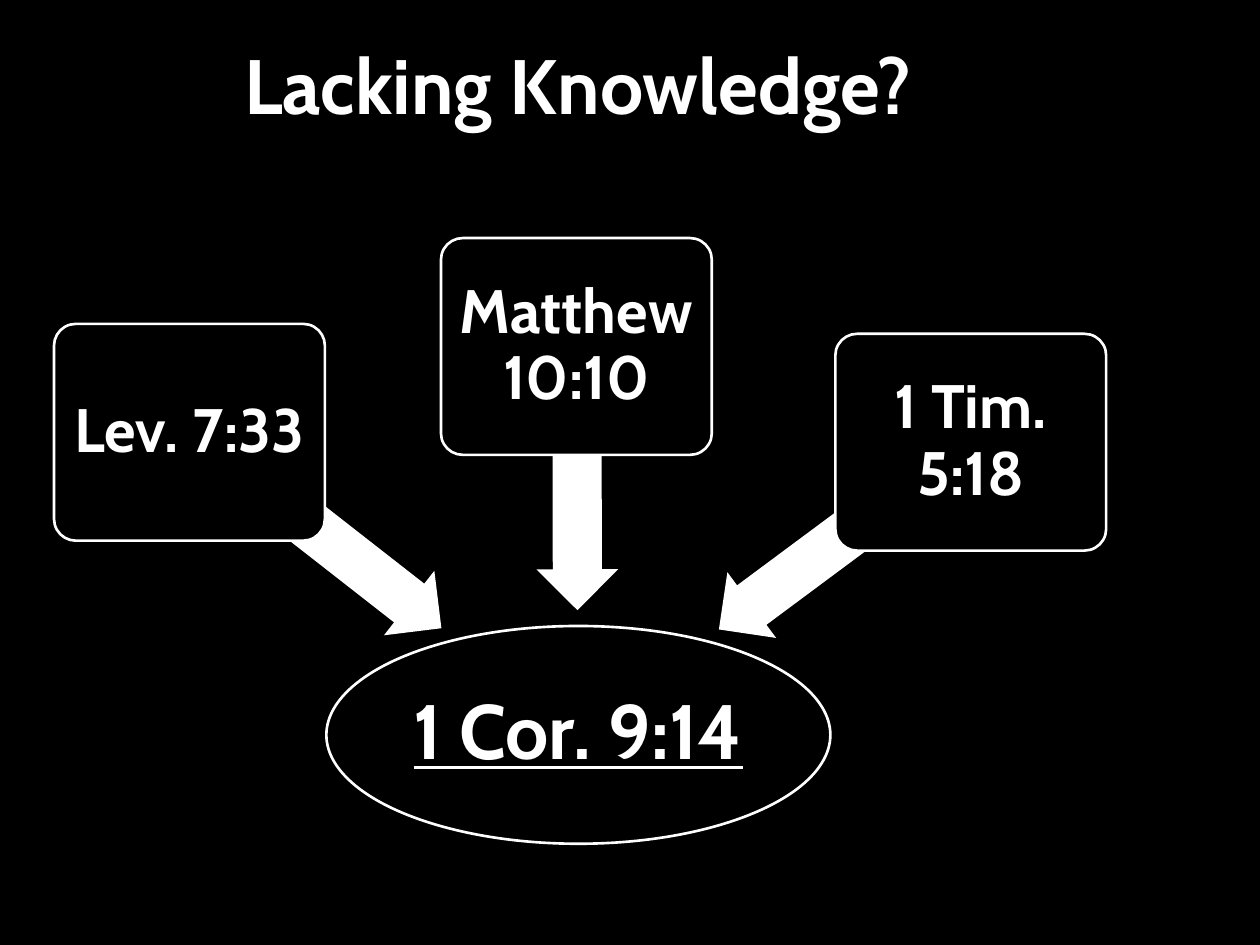
from pptx import Presentation
from pptx.dml.color import RGBColor
from pptx.enum.shapes import MSO_SHAPE
from pptx.enum.text import MSO_ANCHOR, PP_ALIGN
from pptx.util import Cm, Pt

COLORS = {"background": "000000", "foreground": "FFFFFF"}
FONT = "Cabin"
BOX_WIDTH, BOX_HEIGHT = 5.46, 4.37
ARROW_HEIGHT = 1.65
REFERENCES = [
    ("Lev. 7:33", (1.09, 6.53), (3.15, 9.86, 6.43), 218),
    ("Matthew 10:10", (8.89, 4.8), (8.97, 8.81, 5.33), 269.9),
    ("1 Tim. 5:18", (16.84, 6.73), (13.87, 9.98, 6.32), 323.4),
]


def color(name):
    """Return the named palette colour."""
    return RGBColor.from_string(COLORS[name])


def format_text(frame, text, size, anchor):
    """Write centred bold text into a frame and return its paragraph."""
    frame.text = text
    frame.word_wrap = True
    frame.vertical_anchor = anchor
    paragraph = frame.paragraphs[0]
    paragraph.alignment = PP_ALIGN.CENTER
    paragraph.font.name = FONT
    paragraph.font.size = Pt(size)
    paragraph.font.bold = True
    paragraph.font.color.rgb = color("foreground")
    return paragraph


def add_title(slide, text):
    """Place and format the title."""
    title = slide.shapes.title
    title.left, title.top = Cm(0.99), Cm(0.64)
    title.width, title.height = Cm(21.34), Cm(2.11)
    paragraph = format_text(title.text_frame, text, 44, MSO_ANCHOR.BOTTOM)
    paragraph.space_before = Pt(4)


def add_filled_shape(slide, preset, bounds, fill):
    """Add a flat shape filled with a palette colour."""
    shape = slide.shapes.add_shape(preset, *map(Cm, bounds))
    shape.shadow.inherit = False
    shape.fill.solid()
    shape.fill.fore_color.rgb = color(fill)
    return shape


def add_node(slide, preset, bounds, text, size, inset):
    """Add an outlined node with its text and return the node."""
    node = add_filled_shape(slide, preset, bounds, "background")
    node.line.color.rgb = color("foreground")
    node.line.width = Pt(1.5)
    frame = node.text_frame
    frame.margin_left = frame.margin_right = Cm(inset)
    frame.margin_top = frame.margin_bottom = Cm(inset)
    format_text(frame, text, size, MSO_ANCHOR.MIDDLE).line_spacing = 0.9
    return node


def add_arrow(slide, bounds, rotation):
    """Add a block arrow turned towards the conclusion."""
    arrow = add_filled_shape(slide, MSO_SHAPE.LEFT_ARROW, bounds, "foreground")
    arrow.line.fill.background()
    arrow.adjustments[0] = 0.6
    arrow.adjustments[1] = 0.5
    arrow.rotation = rotation


def main():
    """Build the slide and save it."""
    presentation = Presentation()
    presentation.slide_width, presentation.slide_height = Cm(25.4), Cm(19.05)
    slide = presentation.slides.add_slide(presentation.slide_layouts[5])
    slide.background.fill.solid()
    slide.background.fill.fore_color.rgb = color("background")

    add_title(slide, "Lacking Knowledge?")
    conclusion = add_node(slide, MSO_SHAPE.OVAL, (6.58, 12.62, 10.16, 4.39),
                          "1 Cor. 9:14", 44, 0.08)
    conclusion.text_frame.paragraphs[0].font.underline = True

    for reference, corner, arrow_bounds, rotation in REFERENCES:
        add_arrow(slide, (*arrow_bounds, ARROW_HEIGHT), rotation)
        box = add_node(slide, MSO_SHAPE.ROUNDED_RECTANGLE,
                       (*corner, BOX_WIDTH, BOX_HEIGHT), reference, 35, 0.18)
        box.adjustments[0] = 0.1

    presentation.save("out.pptx")


if __name__ == "__main__":
    main()
